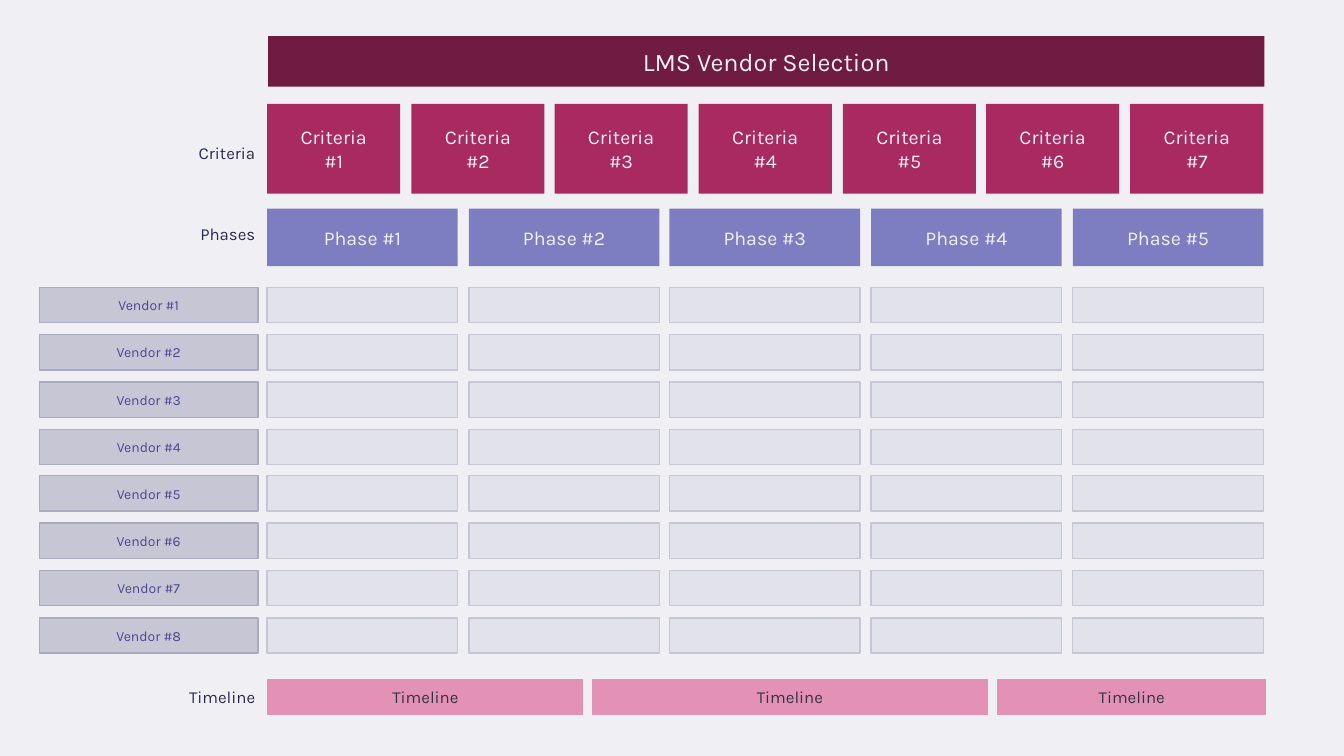
from pptx import Presentation
from pptx.dml.color import RGBColor
from pptx.enum.shapes import MSO_SHAPE as SHAPE
from pptx.enum.text import MSO_ANCHOR as ANCHOR, PP_ALIGN as ALIGN
from pptx.util import Emu, Pt

PX = 9144  # 100 px to the inch
FONT = "Karla"
COLORS = {
    "background": "F0F0F4", "title": "701C40", "criteria": "A82A60",
    "phase": "7D7DC1", "vendor": "C6C6D5", "vendor_line": "AAAAC1",
    "cell": "E2E2EA", "timeline": "E391B4", "light_text": "F0F0F4",
    "label_text": "292956", "vendor_text": "484897", "timeline_text": "333346",
}


def rgb(name):
    return RGBColor.from_string(COLORS[name])


def add_box(x, y, w, h, fill=None, line=None, text="", size=12,
            color="light_text", align=ALIGN.CENTER, inset=10):
    """Add a filled box, or a plain text box when there is no fill."""
    place = [Emu(round(v) * PX) for v in (x, y, w, h)]
    if fill:
        s = slide.shapes.add_shape(SHAPE.RECTANGLE, *place)
        s.shadow.inherit = False
        s.fill.solid()
        s.fill.fore_color.rgb = rgb(fill)
        if line:
            s.line.color.rgb = rgb(line)
            s.line.width = Pt(1)
        else:
            s.line.fill.background()
    else:
        s = slide.shapes.add_textbox(*place)
    if text:
        tf = s.text_frame
        tf.word_wrap = True
        tf.vertical_anchor = ANCHOR.MIDDLE
        tf.margin_left = tf.margin_right = Emu(inset * PX)
        tf.text = text
        p = tf.paragraphs[0]
        p.alignment = align
        r = p.runs[0]
        r.font.name = FONT
        r.font.size = Pt(size)
        r.font.color.rgb = rgb(color)


prs = Presentation()
prs.slide_width, prs.slide_height = Emu(1333 * PX), Emu(750 * PX)
slide = prs.slides.add_slide(prs.slide_layouts[6])
slide.background.fill.solid()
slide.background.fill.fore_color.rgb = rgb("background")

# Title bar
add_box(266, 36, 988, 50, "title", text="LMS Vendor Selection", size=18)

# Row labels
for label, y in (("Criteria", 137), ("Phases", 217), ("Timeline", 676)):
    add_box(152, y, 111, 30, text=label, color="label_text", align=ALIGN.RIGHT)

# Criteria: seven equal boxes, wide insets break the text after the word
for i in range(7):
    add_box(265 + i * 856 / 6, 103, 132, 89, "criteria",
            text=f"Criteria #{i + 1}", size=14, inset=26)

# Phases: five equal columns
phase_xs = [265 + i * 799 / 4 for i in range(5)]
for i, x in enumerate(phase_xs, 1):
    add_box(x, 207, 189, 57, "phase", text=f"Phase #{i}", size=14)

# Vendors: eight rows, one cell under each phase
for i in range(8):
    y = 285 + i * 328 / 7
    add_box(39, y, 217, 35, "vendor", "vendor_line",
            text=f"Vendor #{i + 1}", size=10, color="vendor_text")
    for x in phase_xs:
        add_box(x, y, 189, 35, "cell", "vendor")

# Timeline bars
for x, w in ((266, 312), (588, 391), (990, 265)):
    add_box(x, 674, w, 35, "timeline", "timeline",
            text="Timeline", color="timeline_text")

prs.save("out.pptx")
